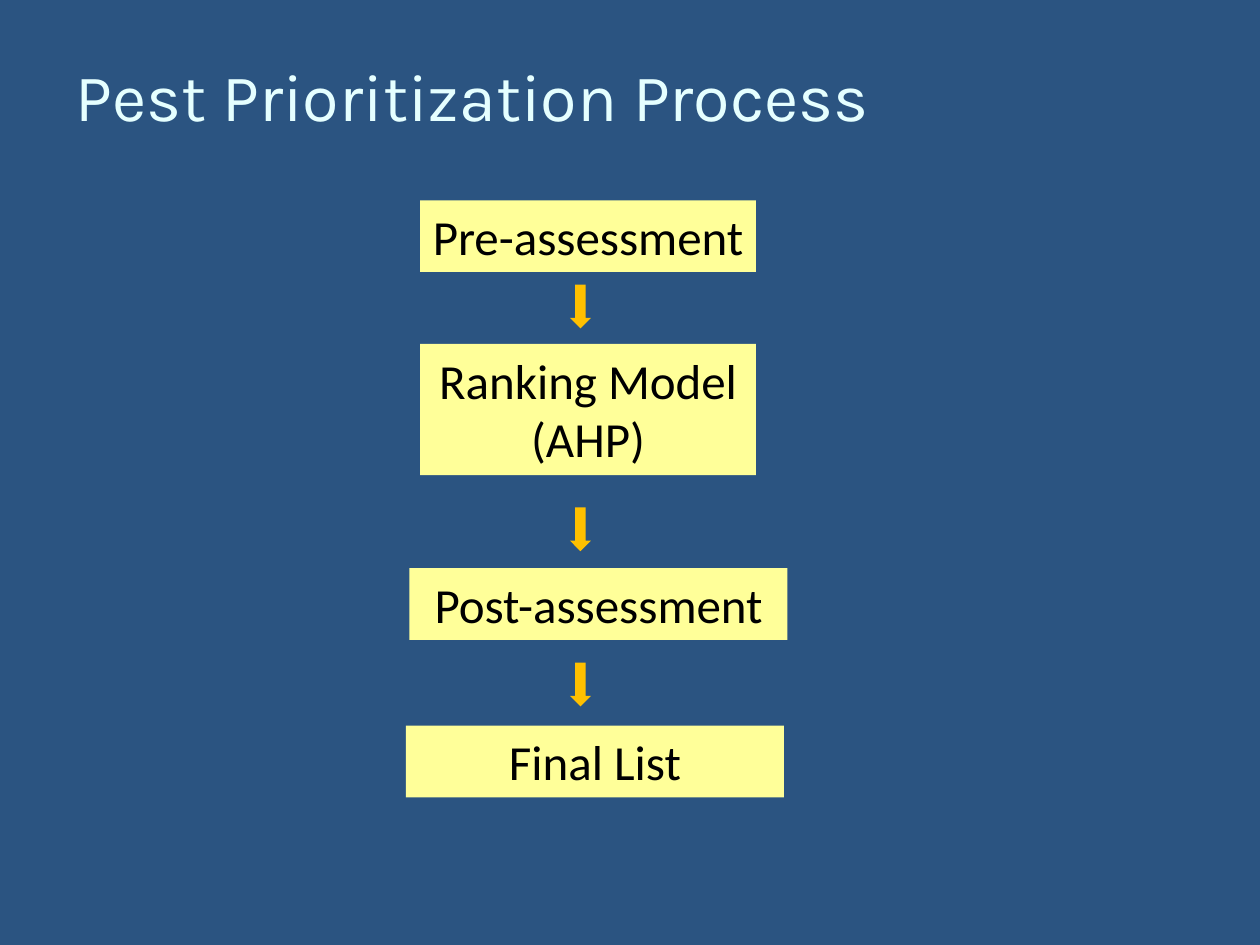
from pptx import Presentation
from pptx.dml.color import RGBColor
from pptx.enum import shapes, text
from pptx.util import Pt

BLUE = RGBColor(0x2B, 0x54, 0x81)
PALE = RGBColor(0xE5, 0xFF, 0xFF)
CREAM = RGBColor(0xFF, 0xFF, 0x99)
GOLD = RGBColor(0xFF, 0xC0, 0x00)
BLACK = RGBColor(0, 0, 0)

STEPS = [
    ("Pre-assessment", 8, 0, 192, 41),
    ("Ranking Model (AHP)", 8, 82, 192, 75),
    ("Post-assessment", 2, 210.2, 216, 41),
    ("Final List", 0, 300.2, 216, 41),
]
ARROWS = [48.2, 175.5, 264.2]


def add_run(para, words, font, size, color):
    """Add one styled run to a paragraph."""
    run = para.add_run()
    run.text = words
    run.font.name = font
    run.font.size = Pt(size)
    run.font.color.rgb = color


def add_form(slide, kind, box, fill):
    """Add a flat filled shape without outline."""
    form = slide.shapes.add_shape(kind, *map(Pt, box))
    form.shadow.inherit = False
    form.fill.solid()
    form.fill.fore_color.rgb = fill
    form.line.fill.background()
    return form


def add_title(slide, left, top, width, height):
    """Place the slide title in the given box."""
    title = slide.shapes.title
    title.left, title.top = Pt(left), Pt(top)
    title.width, title.height = Pt(width), Pt(height)
    frame = title.text_frame
    frame.word_wrap = True
    frame.vertical_anchor = text.MSO_ANCHOR.MIDDLE
    para = frame.paragraphs[0]
    para.alignment = text.PP_ALIGN.LEFT
    add_run(para, "Pest Prioritization Process", "Karla", 38, PALE)


def add_flow(slide, left, top, width):
    """Place the steps and the arrows between them in a column."""
    kinds = shapes.MSO_SHAPE
    for words, dx, dy, wide, high in STEPS:
        step = add_form(slide, kinds.RECTANGLE,
                        (left + dx, top + dy, wide, high), CREAM)
        frame = step.text_frame
        frame.word_wrap = True
        frame.auto_size = text.MSO_AUTO_SIZE.SHAPE_TO_FIT_TEXT
        frame.vertical_anchor = text.MSO_ANCHOR.TOP
        para = frame.paragraphs[0]
        para.alignment = text.PP_ALIGN.CENTER
        add_run(para, words, "Calibri", 28, BLACK)
    for dy in ARROWS:
        add_form(slide, kinds.DOWN_ARROW,
                 (left + width / 2 - 14.3, top + dy, 12, 25), GOLD)


def main():
    """Build the slide and save it."""
    deck = Presentation()
    deck.slide_width, deck.slide_height = Pt(720), Pt(540)
    slide = deck.slides.add_slide(deck.slide_layouts[5])
    back = slide.background.fill
    back.solid()
    back.fore_color.rgb = BLUE
    add_title(slide, 36, 18, 648, 72)
    add_flow(slide, 232, 114.5, 216)
    deck.save("out.pptx")


if __name__ == "__main__":
    main()
